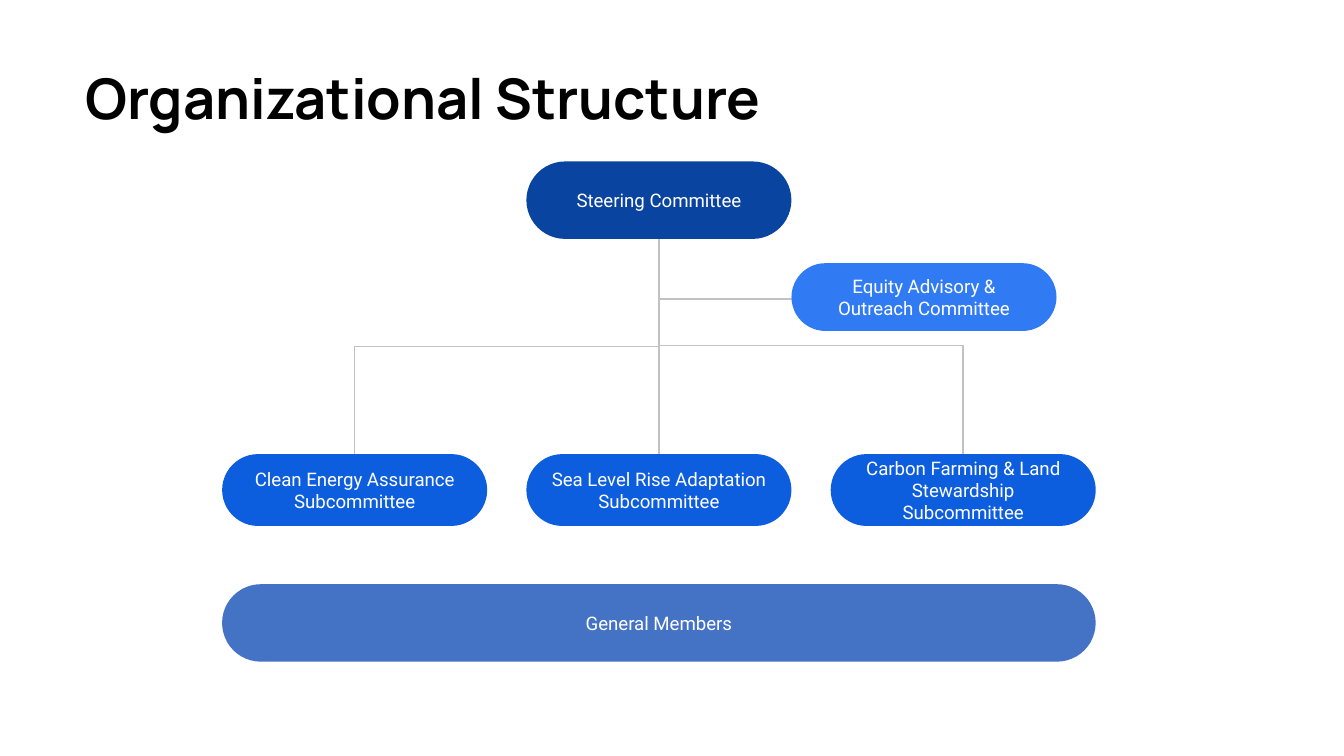
from pptx import Presentation
from pptx.dml.color import RGBColor
from pptx.enum.shapes import MSO_CONNECTOR, MSO_SHAPE
from pptx.enum.text import MSO_ANCHOR, MSO_AUTO_SIZE, PP_ALIGN
from pptx.oxml.ns import qn
from pptx.util import Pt
from lxml import etree

ELBOW = MSO_CONNECTOR.ELBOW
PILL = MSO_SHAPE.ROUNDED_RECTANGLE
MIDDLE = MSO_ANCHOR.MIDDLE
CENTER, LEFT = PP_ALIGN.CENTER, PP_ALIGN.LEFT

TITLE = "Organizational Structure"
STEERING = "Steering Committee"
ADVISORY = "Equity Advisory & Outreach Committee"
SUBCOMMITTEES = [
    "Clean Energy Assurance Subcommittee",
    "Sea Level Rise Adaptation Subcommittee",
    "Carbon Farming & Land Stewardship Subcommittee",
]
MEMBERS = "General Members"

COLORS = {
    "title": "000000",
    "label": "FFFFFF",
    "link": "C2C2C2",
    "steering": "0944A1",
    "advisory": "307BF3",
    "subcommittee": "0D5DDF",
    "members": "4472C4",
}

CHART_LEFT, CHART_WIDTH, BOX_WIDTH = 119, 468, 142
PITCH = (CHART_WIDTH - BOX_WIDTH) / (len(SUBCOMMITTEES) - 1)
CENTER_X = CHART_LEFT + CHART_WIDTH / 2
STEERING_TOP, STEERING_HEIGHT = 86.5, 41.5
ADVISORY_TOP, ADVISORY_HEIGHT = 141, 36.3
SUB_TOP, SUB_HEIGHT = 243.3, 38.5
MEMBERS_TOP = 313
STEERING_BOTTOM = STEERING_TOP + STEERING_HEIGHT
RIGHT_BRANCH_Y = 185


def color(name):
    return RGBColor.from_string(COLORS[name])


def write(frame, text, font, size, color_name, align, margins, bold=False):
    frame.word_wrap = True
    frame.auto_size = MSO_AUTO_SIZE.NONE
    frame.vertical_anchor = MIDDLE
    frame.margin_left = frame.margin_right = Pt(margins[0])
    frame.margin_top = frame.margin_bottom = Pt(margins[1])
    para = frame.paragraphs[0]
    para.alignment = align
    span = para.add_run()
    span.text = text
    span.font.name, span.font.size, span.font.bold = font, Pt(size), bold
    span.font.color.rgb = color(color_name)
    return para


def add_box(page, text, fill, left, top, width, height):
    box = page.shapes.add_shape(PILL, Pt(left), Pt(top), Pt(width), Pt(height))
    box.adjustments[0] = 0.5
    box.shadow.inherit = False
    box.fill.solid()
    box.fill.fore_color.rgb = color(fill)
    box.line.fill.background()
    write(box.text_frame, text, "Roboto", 10, "label", CENTER, (7.2, 7.2))


def add_link(page, x1, y1, x2, y2):
    link = page.shapes.add_connector(ELBOW, Pt(x1), Pt(y1), Pt(x2), Pt(y2))
    link.line.color.rgb = color("link")
    link.line.width = Pt(0.75)
    etree.SubElement(link._element.spPr, qn("a:effectLst"))
    return link


def add_rising_link(page, x1, y1, x2, y2):
    """Elbow that leaves (x1, y1) upwards: a level one turned by 270 degrees."""
    run, rise = abs(x2 - x1), y1 - y2
    left, top = (x1 + x2 - rise) / 2, (y1 + y2 - run) / 2
    ends = (top + run, top) if x2 < x1 else (top, top + run)
    link = add_link(page, left, ends[0], left + rise, ends[1])
    link._element.spPr.find(qn("a:xfrm")).set("rot", str(270 * 60000))
    return link


def add_links(page):
    advisory_y = ADVISORY_TOP + ADVISORY_HEIGHT / 2
    level = add_link(page, CENTER_X, advisory_y + 1, CENTER_X + 114, advisory_y)
    bend = etree.SubElement(level._element.spPr.prstGeom.get_or_add_avLst(), qn("a:gd"))
    bend.set("name", "adj1")
    bend.set("fmla", "val 95800")
    for index in range(len(SUBCOMMITTEES)):
        x = CHART_LEFT + index * PITCH + BOX_WIDTH / 2
        if x > CENTER_X:
            link = add_rising_link(page, x, SUB_TOP, CENTER_X, RIGHT_BRANCH_Y)
            link._element.spPr.prstGeom.set("prst", "bentConnector2")
        else:
            add_rising_link(page, x, SUB_TOP, CENTER_X, STEERING_BOTTOM)


def main():
    deck = Presentation()
    deck.slide_width, deck.slide_height = Pt(720), Pt(405)
    page = deck.slides.add_slide(deck.slide_layouts[5])

    title = page.shapes.title
    title.left, title.top, title.width, title.height = Pt(41), Pt(24.5), Pt(638), Pt(60)
    para = write(title.text_frame, TITLE, "Manrope", 30, "title", LEFT, (5, 2.5), True)
    para.line_spacing = 0.9

    add_links(page)
    add_box(page, STEERING, "steering", CENTER_X - BOX_WIDTH / 2, STEERING_TOP,
            BOX_WIDTH, STEERING_HEIGHT)
    add_box(page, ADVISORY, "advisory", CENTER_X + BOX_WIDTH / 2, ADVISORY_TOP,
            BOX_WIDTH, ADVISORY_HEIGHT)
    for index, name in enumerate(SUBCOMMITTEES):
        add_box(page, name, "subcommittee", CHART_LEFT + index * PITCH, SUB_TOP,
                BOX_WIDTH, SUB_HEIGHT)
    add_box(page, MEMBERS, "members", CHART_LEFT, MEMBERS_TOP, CHART_WIDTH, STEERING_HEIGHT)
    deck.save("out.pptx")


if __name__ == "__main__":
    main()
